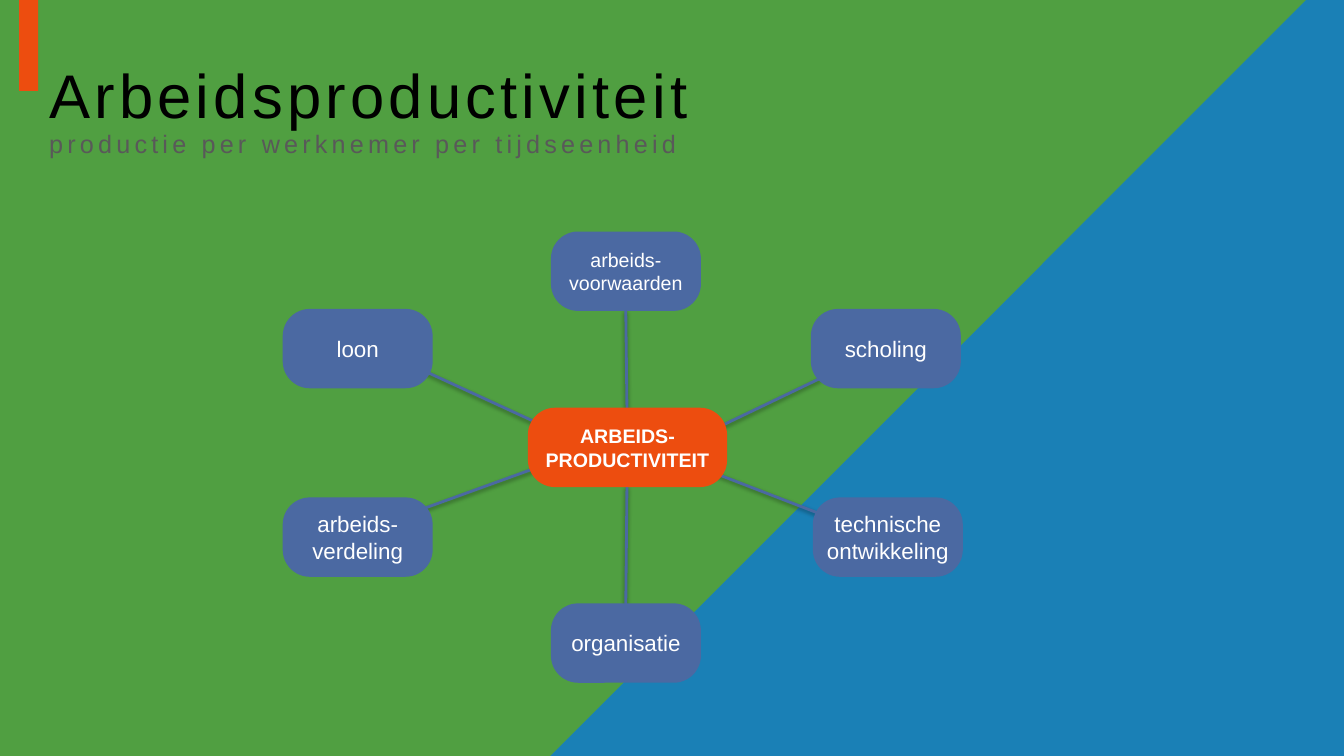
from dataclasses import dataclass
from typing import Any

import pptx
import pptx.dml.color
import pptx.enum.shapes
import pptx.enum.text
import pptx.oxml
import pptx.util
from pptx.util import Cm

COLORS = {
    "green": "258812",
    "blue": "1A80B6",
    "orange": "ED4D0F",
    "node": "4B69A2",
    "black": "000000",
    "gray": "595959",
    "white": "FFFFFF",
}
WIDTH, HEIGHT = 33.87, 19.05
NODE_WIDTH, NODE_HEIGHT = 3.71, 1.93
NAMESPACE = 'xmlns:a="http://schemas.openxmlformats.org/drawingml/2006/main"'
SHAPES = pptx.enum.shapes.MSO_SHAPE


@dataclass(frozen=True)
class Factor:
    """A factor around the hub, with its spoke; lengths in centimetres."""
    text: str
    left: float
    top: float
    spoke_start: tuple[float, float]
    spoke_end: tuple[float, float]
    size: int = 16


FACTORS = [
    Factor("loon", 7.16, 7.82, (13.72, 10.74), (10.59, 9.3)),
    Factor("arbeids-voorwaarden", 13.92, 5.87, (15.77, 7.82), (15.8, 10.31), 14),
    Factor("scholing", 20.47, 7.82, (17.78, 10.92), (20.68, 9.53)),
    Factor("arbeids-verdeling", 7.16, 12.57, (13.59, 11.76), (10.44, 12.9)),
    Factor("technische ontwikkeling", 20.52, 12.57, (17.25, 11.63), (20.8, 13)),
    Factor("organisatie", 13.92, 15.24, (15.8, 12.24), (15.77, 15.24)),
]


def rgb(name: str) -> pptx.dml.color.RGBColor:
    return pptx.dml.color.RGBColor.from_string(COLORS[name])


def set_attributes(target: Any, values: dict[str, Any]) -> None:
    for name, value in values.items():
        setattr(target, name, value)


def paint(shape: Any, color: str) -> None:
    """Give a shape a plain fill without line or shadow."""
    shape.shadow.inherit = False
    shape.fill.solid()
    shape.fill.fore_color.rgb = rgb(color)
    shape.line.fill.background()


def add_box(slide: Any, kind: Any, color: str, left: float, top: float,
            width: float, height: float) -> Any:
    shape = slide.shapes.add_shape(kind, Cm(left), Cm(top), Cm(width), Cm(height))
    paint(shape, color)
    return shape


def add_run(paragraph: Any, text: str, color: str, size: int, bold: bool = False) -> Any:
    run = paragraph.add_run()
    run.text = text
    set_attributes(run.font, {"name": "Arial", "size": pptx.util.Pt(size), "bold": bold})
    run.font.color.rgb = rgb(color)
    return run


def add_background(slide: Any) -> None:
    field = add_box(slide, SHAPES.RECTANGLE, "green", 0, 0, WIDTH, HEIGHT)
    color_element = field.fill._xPr.find(".//{*}srgbClr")
    color_element.append(pptx.oxml.parse_xml(f'<a:alpha {NAMESPACE} val="80000"/>'))
    builder = slide.shapes.build_freeform(Cm(32.92), 0)
    corners = [(WIDTH, 0), (WIDTH, HEIGHT), (13.87, HEIGHT)]
    builder.add_line_segments([(Cm(x), Cm(y)) for x, y in corners], close=True)
    paint(builder.convert_to_shape(), "blue")
    add_box(slide, SHAPES.RECTANGLE, "orange", 0.48, 0, 0.48, 2.29)


def add_title(slide: Any) -> None:
    box = slide.shapes.add_textbox(Cm(0.99), Cm(0.99), Cm(32.03), Cm(3.68))
    set_attributes(box.text_frame, {
        "word_wrap": True,
        "vertical_anchor": pptx.enum.text.MSO_ANCHOR.MIDDLE,
    })
    paragraph = box.text_frame.paragraphs[0]
    paragraph.line_spacing = 0.9
    title = add_run(paragraph, "Arbeidsproductiviteit", "black", 44)
    paragraph.add_line_break()
    subtitle = add_run(paragraph, "productie per werknemer per tijdseenheid", "gray", 18)
    for run in (title, subtitle):
        run.font._element.set("spc", "300")


def add_spoke(slide: Any, start: tuple[float, float], end: tuple[float, float]) -> None:
    """Draw a line with a soft shadow below it."""
    points = [Cm(value) for value in (*start, *end)]
    line = slide.shapes.add_connector(pptx.enum.shapes.MSO_CONNECTOR.STRAIGHT, *points)
    line.line.color.rgb = rgb("node")
    line.line.width = pptx.util.Pt(2)
    line._element.spPr.append(pptx.oxml.parse_xml(
        f'<a:effectLst {NAMESPACE}><a:outerShdw blurRad="40000" dist="20000" '
        'dir="5400000" rotWithShape="0"><a:srgbClr val="000000">'
        '<a:alpha val="38000"/></a:srgbClr></a:outerShdw></a:effectLst>'))


def add_node(slide: Any, text: str, color: str, left: float, top: float,
             width: float, size: int, bold: bool = False) -> None:
    node = add_box(slide, SHAPES.ROUNDED_RECTANGLE, color, left, top, width, NODE_HEIGHT)
    node.adjustments[0] = 0.337
    node.line.color.rgb = rgb(color)
    node.line.width = pptx.util.Pt(2)
    set_attributes(node.text_frame, {
        "word_wrap": True,
        "vertical_anchor": pptx.enum.text.MSO_ANCHOR.MIDDLE,
        "margin_left": Cm(0.1),
        "margin_right": Cm(0.1),
        "margin_top": Cm(0.13),
        "margin_bottom": Cm(0.13),
    })
    paragraph = node.text_frame.paragraphs[0]
    paragraph.alignment = pptx.enum.text.PP_ALIGN.CENTER
    add_run(paragraph, text, "white", size, bold)


def main() -> None:
    presentation = pptx.Presentation()
    set_attributes(presentation, {"slide_width": Cm(WIDTH), "slide_height": Cm(HEIGHT)})
    slide = presentation.slides.add_slide(presentation.slide_layouts[6])
    add_background(slide)
    add_title(slide)
    for factor in FACTORS:
        add_spoke(slide, factor.spoke_start, factor.spoke_end)
        add_node(slide, factor.text, "node", factor.left, factor.top,
                 NODE_WIDTH, factor.size)
    add_node(slide, "ARBEIDS-PRODUCTIVITEIT", "orange", 13.34, 10.31, 4.95, 14, bold=True)
    presentation.save("out.pptx")


if __name__ == "__main__":
    main()
